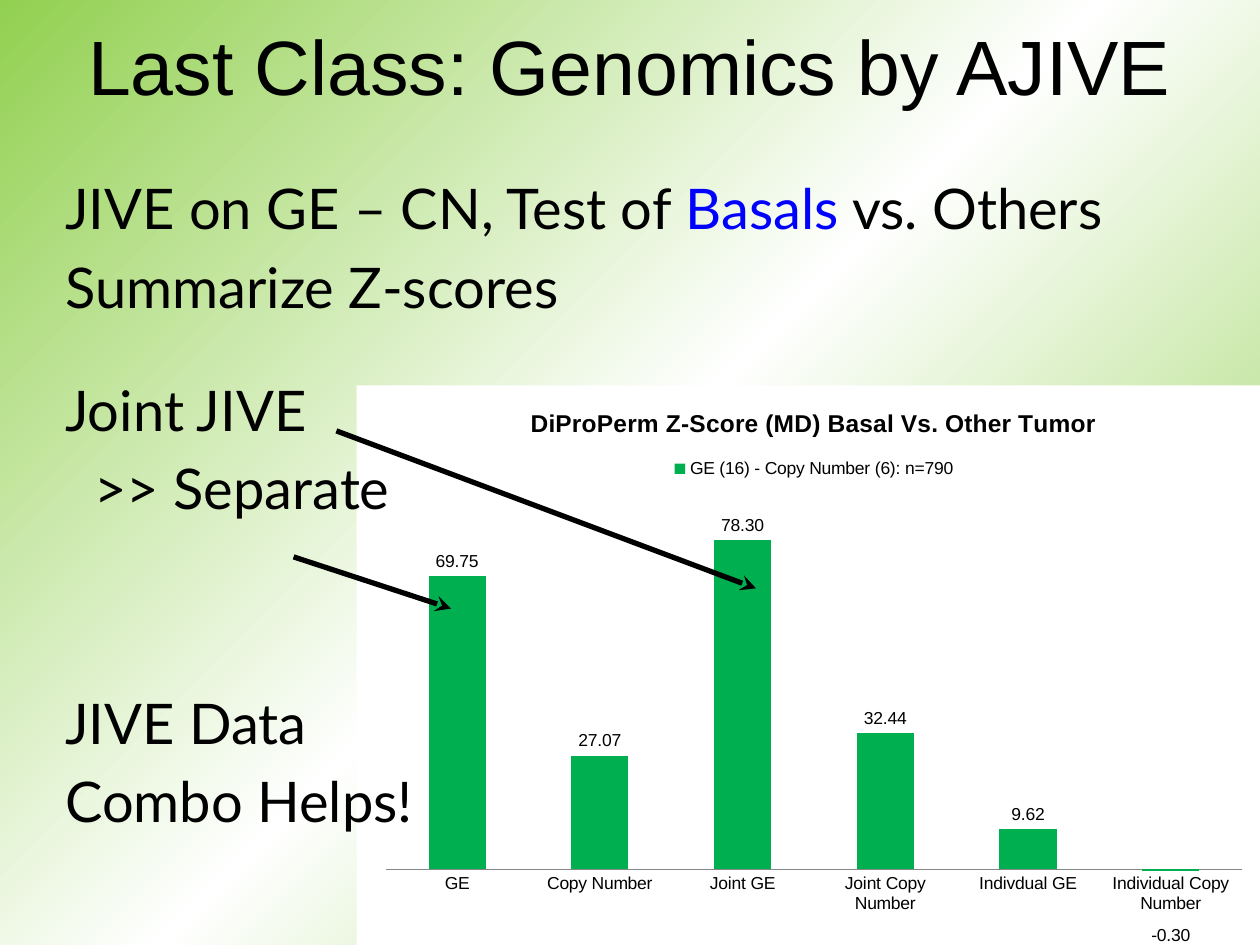
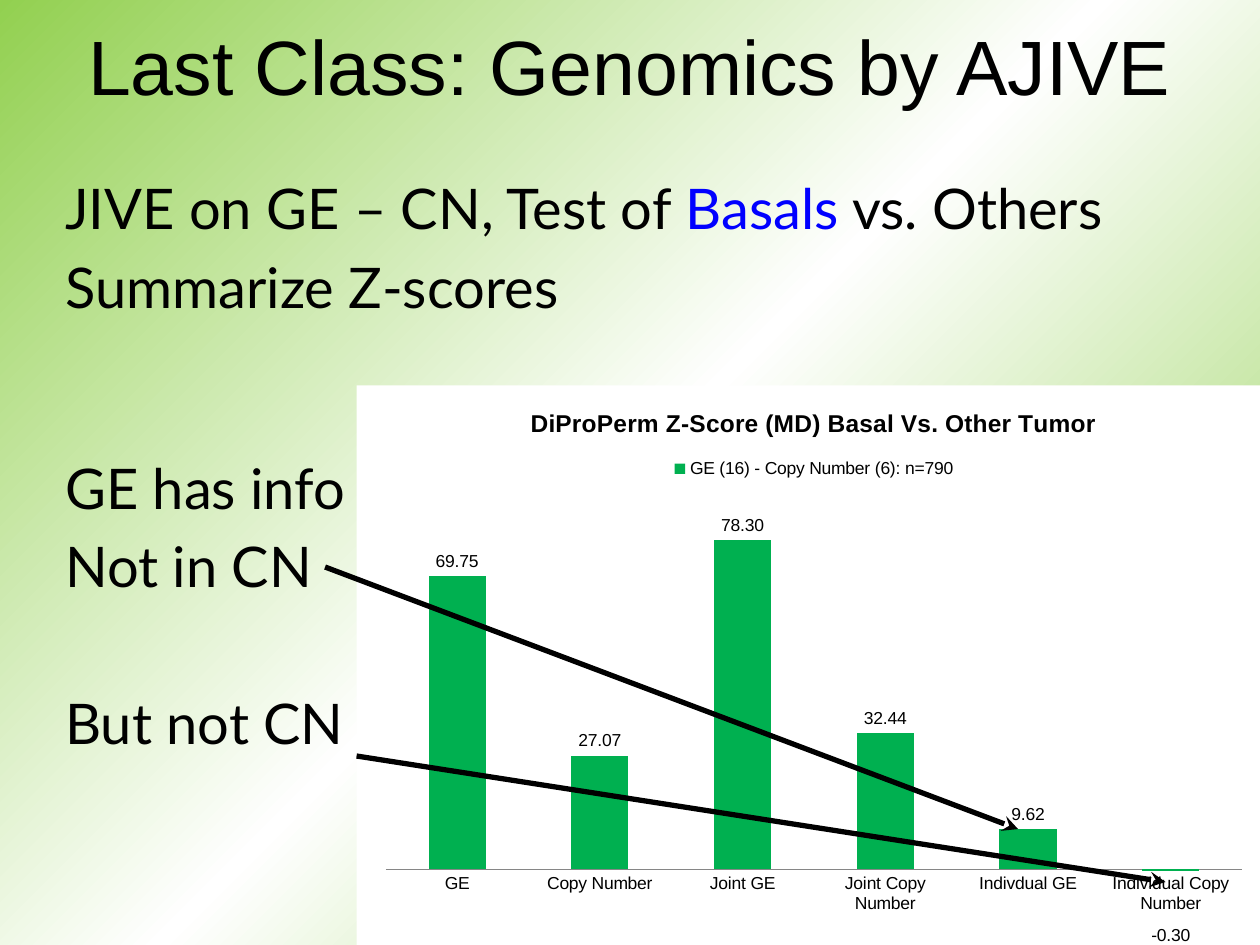
"""Build two slides that summarise the AJIVE genomics Z-scores."""
import copy

import lxml.etree
import pptx
import pptx.chart.data
import pptx.dml.color
import pptx.enum.chart
import pptx.enum.shapes
import pptx.enum.text
import pptx.oxml
import pptx.oxml.ns
import pptx.util

Inches = pptx.util.Inches
Pt = pptx.util.Pt
qn = pptx.oxml.ns.qn

BLACK, WHITE, BLUE = "000000", "FFFFFF", "0000FF"
LIME, BAR_GREEN, AXIS_GRAY = "92D050", "00B050", "868686"
TITLE_FONT, BODY_FONT = "Arial", "Lato"

TITLE = "Last Class: Genomics by AJIVE"
BODY_SIZE = 32
PARAGRAPH_GAP = 6.4
BLANK_LINE = 44.6
SMALL_BLANK_LINE = 25.6

CHART_TITLE = "DiProPerm Z-Score (MD) Basal Vs. Other Tumor"
SERIES_NAME = "GE (16) - Copy Number (6): n=790"
Z_SCORES = {
    "GE": 69.75,
    "Copy Number": 27.07,
    "Joint GE": 78.30,
    "Joint Copy Number": 32.44,
    "Indivdual GE": 9.62,
    "Individual Copy Number": -0.30,
}

INTRO = [
    ([("JIVE on GE – CN, Test of ", BLACK), ("Basals", BLUE), (" vs. Others", BLACK)], 0, 0),
    ([("Summarize Z-scores", BLACK)], 0, 0),
]
SLIDES = [
    {
        "lines": [
            ([("Joint JIVE", BLACK)], SMALL_BLANK_LINE, 0),
            ([(">> Separate", BLACK)], 0, 0.23),
            ([("JIVE Data", BLACK)], 2 * BLANK_LINE, 0),
            ([("Combo Helps!", BLACK)], 0, 0),
        ],
        "arrows": [((2.67, 3.42), (6, 4.67)), ((2.33, 4.42), (3.58, 4.83))],
    },
    {
        "lines": [
            ([("GE has info", BLACK)], SMALL_BLANK_LINE + BLANK_LINE, 0),
            ([("Not in CN", BLACK)], 0, 0),
            ([("But not CN", BLACK)], BLANK_LINE, 0),
        ],
        "arrows": [((2.58, 4.5), (8.08, 6.58)), ((2.83, 6), (9.25, 7))],
    },
]


def rgb(hex_color):
    """Return the colour object for a hex string."""
    return pptx.dml.color.RGBColor.from_string(hex_color)


def style_font(font, name, size, color, bold=False):
    """Apply typeface, size, colour and weight to a font."""
    font.name = name
    font.size = Pt(size)
    font.bold = bold
    font.color.rgb = rgb(color)


def set_background(slide):
    """Fill the slide with a diagonal lime-white-lime gradient."""
    fill = slide.background.fill
    fill.gradient()
    fill.gradient_angle = 315
    stop_list = slide.background._cSld.find(".//" + qn("a:gsLst"))
    stop_list.append(copy.deepcopy(stop_list[0]))
    for stop, (position, color) in zip(fill.gradient_stops, [(0, LIME), (0.5, WHITE), (1, LIME)]):
        stop.position = position
        stop.color.rgb = rgb(color)


def add_text_box(slide, left, top, width, height):
    """Add a wrapping text box and return its text frame."""
    box = slide.shapes.add_textbox(Inches(left), Inches(top), Inches(width), Inches(height))
    box.text_frame.word_wrap = True
    return box.text_frame


def add_title(slide):
    """Add the centred slide title."""
    text_frame = add_text_box(slide, 0.5, 0, 9, 1.03)
    text_frame.vertical_anchor = pptx.enum.text.MSO_ANCHOR.MIDDLE
    text_frame.text = TITLE
    paragraph = text_frame.paragraphs[0]
    paragraph.alignment = pptx.enum.text.PP_ALIGN.CENTER
    style_font(paragraph.runs[0].font, TITLE_FONT, 44, BLACK)


def add_body(slide, lines):
    """Add body lines given as runs, extra gap above and indent."""
    text_frame = add_text_box(slide, 0.42, 1.33, 9.33, 5.75)
    for index, (runs, extra_gap, indent) in enumerate(lines):
        paragraph = text_frame.add_paragraph() if index else text_frame.paragraphs[0]
        if index:
            paragraph.space_before = Pt(PARAGRAPH_GAP + extra_gap)
        if indent:
            paragraph._p.get_or_add_pPr().set("marL", str(Inches(indent)))
        for text, color in runs:
            run = paragraph.add_run()
            run.text = text
            style_font(run.font, BODY_FONT, BODY_SIZE, color)


def add_panel(slide):
    """Add the white panel behind the chart."""
    panel = slide.shapes.add_shape(
        pptx.enum.shapes.MSO_SHAPE.RECTANGLE, Inches(2.83), Inches(3.06), Inches(7.17), Inches(4.44)
    )
    panel.shadow.inherit = False
    panel.fill.solid()
    panel.fill.fore_color.rgb = rgb(WHITE)
    panel.line.fill.background()


def make_layout(**settings):
    """Return a manual chart layout element with the given settings."""
    layout = pptx.oxml.parse_xml(f"<c:layout {pptx.oxml.ns.nsdecls('c')}><c:manualLayout/></c:layout>")
    for name, value in settings.items():
        lxml.etree.SubElement(layout[0], qn(f"c:{name}")).set("val", str(value))
    return layout


def place_plot(chart):
    """Fix the inner plot area within the chart frame."""
    plot_area = chart._chartSpace.chart.plotArea
    for old_layout in plot_area.findall(qn("c:layout")):
        plot_area.remove(old_layout)
    plot_area.insert(0, make_layout(
        layoutTarget="inner", xMode="edge", yMode="edge", x=0.02, y=0.19, w=0.96, h=0.76
    ))


def style_axes(chart):
    """Hide the value axis and keep a plain category line."""
    value_axis = chart.value_axis
    value_axis.visible = False
    value_axis.has_major_gridlines = False
    value_axis.minimum_scale, value_axis.maximum_scale = -10, 90
    category_axis = chart.category_axis
    category_axis.major_tick_mark = pptx.enum.chart.XL_TICK_MARK.NONE
    category_axis.format.line.color.rgb = rgb(AXIS_GRAY)


def add_value_labels(series):
    """Label each bar, with the negative value below its category name."""
    labels = series.data_labels
    labels.show_value = True
    labels.number_format = "0.00"
    labels.number_format_is_linked = False
    last_label = series.points[len(Z_SCORES) - 1].data_label
    for label in (labels, last_label):
        style_font(label.font, TITLE_FONT, 10, BLACK)
        label.position = pptx.enum.chart.XL_LABEL_POSITION.OUTSIDE_END
    series._element.find(".//" + qn("c:dLbl")).insert(1, make_layout(x=0, y=0.09))
    for leader_lines in series._element.iter(qn("c:showLeaderLines")):
        leader_lines.set("val", "0")


def add_z_score_chart(slide):
    """Add the column chart of Z-scores."""
    chart_data = pptx.chart.data.CategoryChartData(number_format="0.00")
    chart_data.categories = list(Z_SCORES)
    chart_data.add_series(SERIES_NAME, list(Z_SCORES.values()))
    chart = slide.shapes.add_chart(
        pptx.enum.chart.XL_CHART_TYPE.COLUMN_CLUSTERED,
        Inches(2.92), Inches(3.06), Inches(7.08), Inches(4.44), chart_data,
    ).chart
    style_font(chart.font, TITLE_FONT, 10, BLACK)
    chart.has_title = True
    chart.chart_title.include_in_layout = False
    chart.chart_title.text_frame.text = CHART_TITLE
    title_run = chart.chart_title.text_frame.paragraphs[0].runs[0]
    style_font(title_run.font, TITLE_FONT, 14, BLACK, bold=True)
    chart.has_legend = True
    chart.legend.position = pptx.enum.chart.XL_LEGEND_POSITION.TOP
    chart.legend.include_in_layout = False
    plot = chart.plots[0]
    plot.vary_by_categories = False
    plot.gap_width, plot.overlap = 150, -25
    series = plot.series[0]
    series.invert_if_negative = False
    series.format.fill.solid()
    series.format.fill.fore_color.rgb = rgb(BAR_GREEN)
    style_axes(chart)
    add_value_labels(series)
    place_plot(chart)


def add_arrow(slide, start, end):
    """Add a black arrow with a stealth head at its end."""
    arrow = slide.shapes.add_connector(
        pptx.enum.shapes.MSO_CONNECTOR.STRAIGHT, *(Inches(value) for value in (*start, *end))
    )
    arrow.line.color.rgb = rgb(BLACK)
    arrow.line.width = Pt(3)
    lxml.etree.SubElement(arrow.line._get_or_add_ln(), qn("a:tailEnd")).set("type", "stealth")
    lxml.etree.SubElement(arrow._element.spPr, qn("a:effectLst"))


def main():
    """Build and save the presentation."""
    presentation = pptx.Presentation()
    presentation.slide_width = Inches(10)
    presentation.slide_height = Inches(7.5)
    for content in SLIDES:
        slide = presentation.slides.add_slide(presentation.slide_layouts[6])
        set_background(slide)
        add_panel(slide)
        add_z_score_chart(slide)
        add_title(slide)
        add_body(slide, INTRO + content["lines"])
        for start, end in content["arrows"]:
            add_arrow(slide, start, end)
    presentation.save("out.pptx")


if __name__ == "__main__":
    main()
